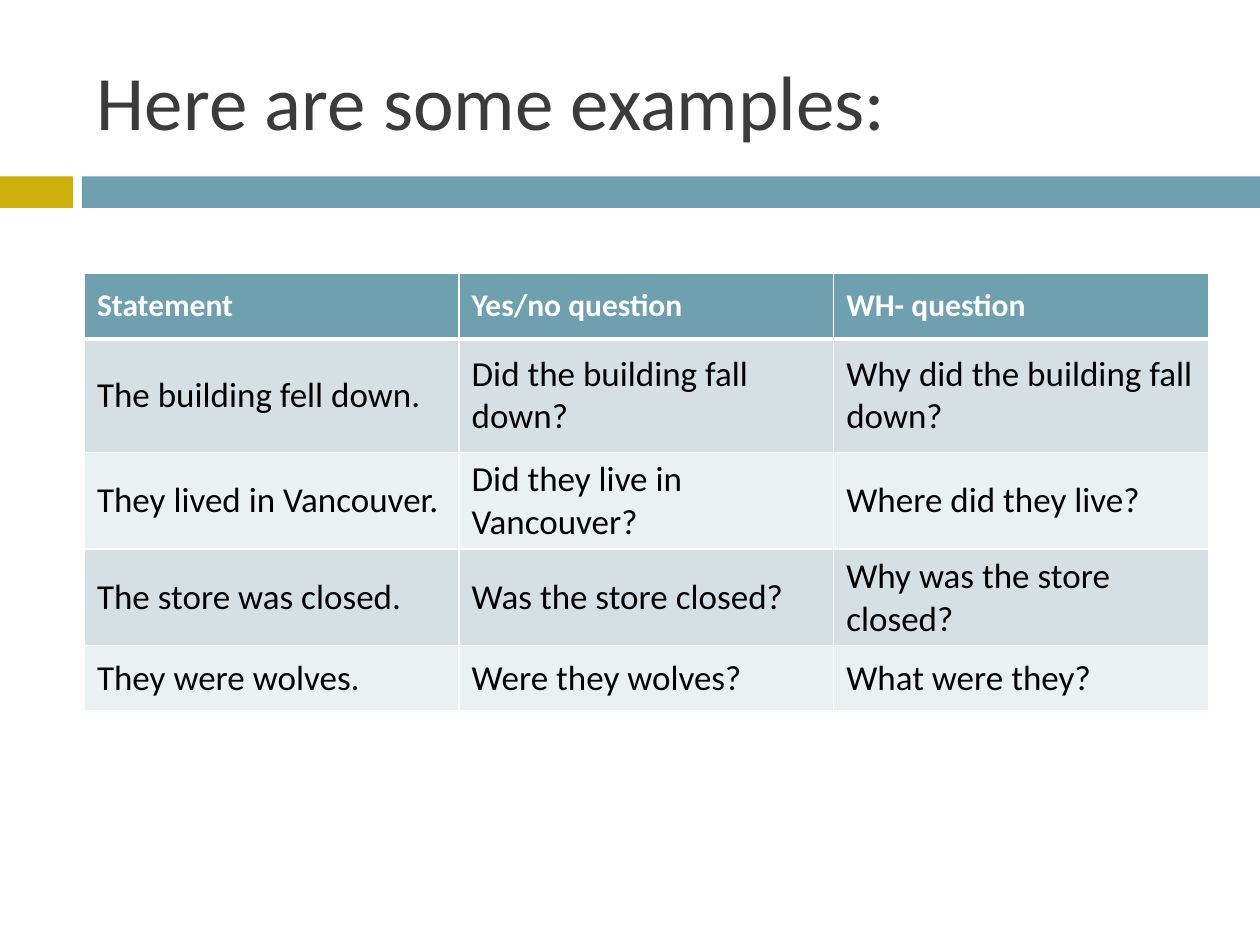
from dataclasses import dataclass

from lxml.etree import SubElement
from pptx import Presentation
from pptx.dml.color import RGBColor
from pptx.enum.shapes import MSO_SHAPE
from pptx.enum.text import MSO_ANCHOR
from pptx.oxml.ns import qn
from pptx.util import Inches, Pt


@dataclass(frozen=True)
class Theme:
    font: str = "Calibri"
    title_color: str = "3B3B3B"
    accent: str = "6EA0B0"
    gold: str = "CCAF0A"
    white: str = "FFFFFF"
    black: str = "000000"
    bands: tuple = ("D5DFE4", "EBF0F2")
    title_size: int = 44
    header_size: int = 18
    body_size: int = 20
    thin_line: int = 1
    thick_line: int = 3


THEME = Theme()

EXAMPLES = [
    ("Statement", "Yes/no question", "WH- question"),
    ("The building fell down.", "Did the building fall down?", "Why did the building fall down?"),
    ("They lived in Vancouver.", "Did they live in Vancouver?", "Where did they live?"),
    ("The store was closed.", "Was the store closed?", "Why was the store closed?"),
    ("They were wolves.", "Were they wolves?", "What were they?"),
]
ROW_HEIGHTS = (0.52, 0.9, 0.52, 0.52, 0.52)


def write_text(frame, text, size, color, bold=False):
    span = frame.paragraphs[0].add_run()
    span.text = text
    formats = {"name": THEME.font, "size": Pt(size), "bold": bold}
    for name, value in formats.items():
        setattr(span.font, name, value)
    span.font.color.rgb = RGBColor.from_string(color)


def add_title(page, box, text):
    frame = page.shapes.add_textbox(*map(Inches, box)).text_frame
    formats = {"word_wrap": True, "vertical_anchor": MSO_ANCHOR.MIDDLE}
    for name, value in formats.items():
        setattr(frame, name, value)
    write_text(frame, text, THEME.title_size, THEME.title_color)


def add_band(page, box, tab_width, gap):
    left, top, width, height = box
    bar_left = left + tab_width + gap
    parts = [
        (left, tab_width, THEME.gold),
        (bar_left, left + width - bar_left, THEME.accent),
    ]
    for part_left, part_width, color in parts:
        bar = page.shapes.add_shape(
            MSO_SHAPE.RECTANGLE, *map(Inches, (part_left, top, part_width, height))
        )
        bar.fill.solid()
        bar.fill.fore_color.rgb = RGBColor.from_string(color)
        bar.line.fill.background()
        bar.shadow.inherit = False


def set_borders(cell, bottom_width):
    properties = cell._tc.get_or_add_tcPr()
    widths = dict.fromkeys(("lnL", "lnR", "lnT"), THEME.thin_line) | {"lnB": bottom_width}
    for position, (edge, width) in enumerate(widths.items()):
        line = SubElement(properties, qn(f"a:{edge}"), w=str(Pt(width)))
        fill = SubElement(line, qn("a:solidFill"))
        SubElement(fill, qn("a:srgbClr"), val=THEME.white)
        properties.insert(position, line)


def add_examples(page, box, rows, heights):
    table = page.shapes.add_table(len(rows), len(rows[0]), *map(Inches, box)).table
    for column in table.columns:
        column.width = Inches(box[2] / len(rows[0]))
    for index, (texts, height) in enumerate(zip(rows, heights)):
        header = index == 0
        table.rows[index].height = Inches(height)
        fill = THEME.accent if header else THEME.bands[(index - 1) % 2]
        size = THEME.header_size if header else THEME.body_size
        color = THEME.white if header else THEME.black
        for cell, text in zip(table.rows[index].cells, texts):
            cell.vertical_anchor = MSO_ANCHOR.MIDDLE
            cell.fill.solid()
            cell.fill.fore_color.rgb = RGBColor.from_string(fill)
            write_text(cell.text_frame, text, size, color, header)
            set_borders(cell, THEME.thick_line if header else THEME.thin_line)


def main():
    deck = Presentation()
    deck.slide_width, deck.slide_height = Inches(10), Inches(7.5)
    page = deck.slides.add_slide(deck.slide_layouts[6])
    add_band(page, (0, 1.4, 10, 0.25), tab_width=0.58, gap=0.07)
    add_title(page, (0.67, 0.25, 8.92, 1.08), "Here are some examples:")
    add_examples(page, (0.67, 2.17, 8.92, sum(ROW_HEIGHTS)), EXAMPLES, ROW_HEIGHTS)
    deck.save("out.pptx")


if __name__ == "__main__":
    main()
